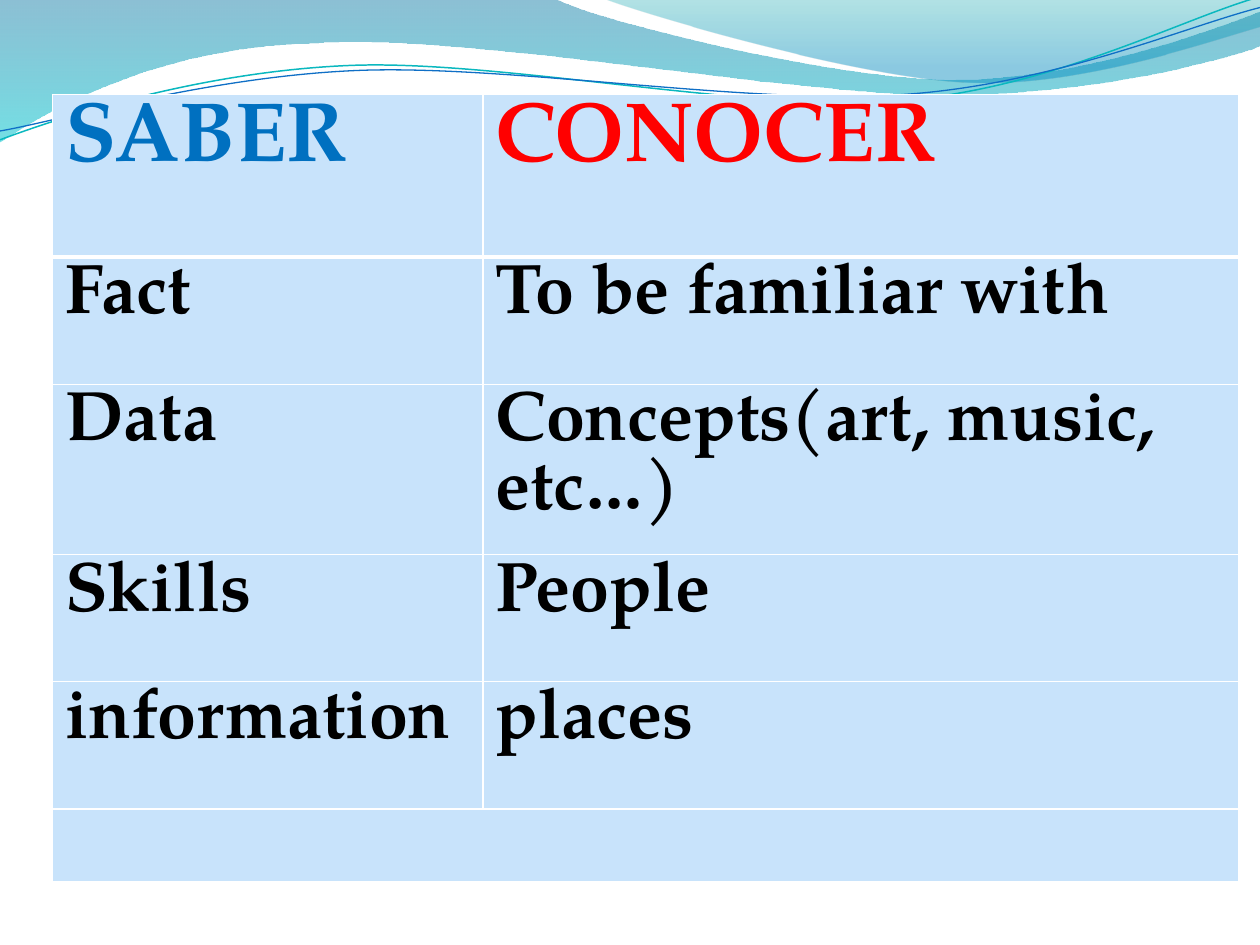
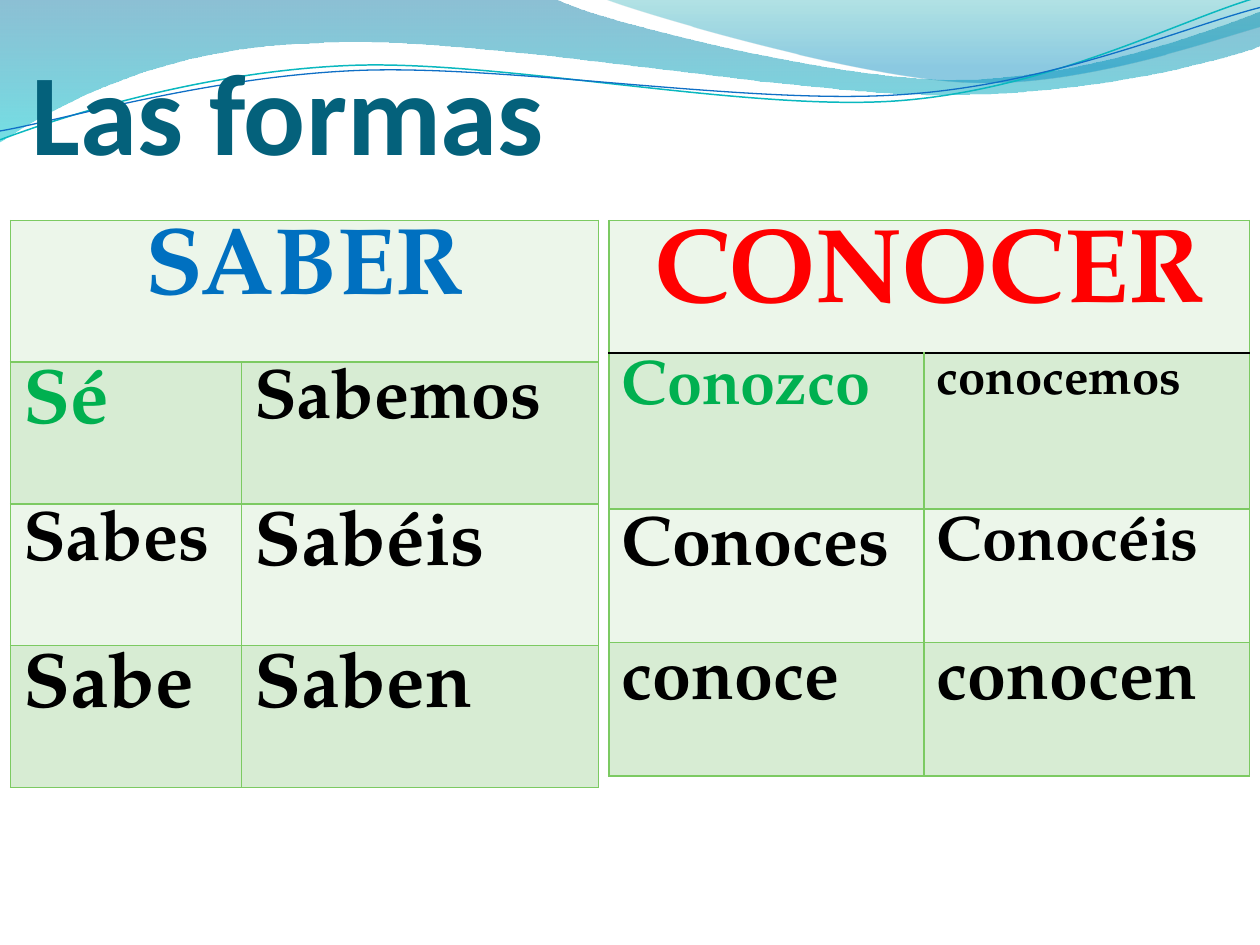
from dataclasses import dataclass
from math import cos, radians, sin
from typing import Any, NamedTuple, Optional

from lxml.etree import SubElement
from pptx import Presentation
from pptx.dml.color import RGBColor
from pptx.enum.text import MSO_ANCHOR, MSO_AUTO_SIZE, PP_ALIGN
from pptx.oxml import parse_xml
from pptx.oxml.ns import nsdecls, qn
from pptx.util import Inches, Pt

# Shared colours and fonts
BLACK, WHITE, RED, BLUE, GREEN = "000000", "FFFFFF", "FF0000", "0070C0", "00B050"
TITLE_TEAL, SKY = "04617B", "C8E3FB"
PALE_GREEN, SOFT_GREEN, GRID_GREEN = "ECF6EA", "D7ECD3", "7CCA62"
TITLE_FONT, TABLE_FONT = "Calibri", "TeX Gyre Pagella"

Point = tuple[float, float]


class Stop(NamedTuple):
    position: float
    color: str
    opacity: int


class Edge(NamedTuple):
    color: str
    points: float


class Word(NamedTuple):
    text: str
    size: int = 40
    color: str = BLACK


@dataclass
class Wave:
    """Each segment holds one point (straight) or three (Bezier curve)."""
    start: Point
    segments: list[tuple[Point, ...]]
    stops: tuple[Stop, ...] = ()
    line: Optional[Edge] = None
    rotation: float = 0
    center: Point = (0, 0)


@dataclass
class VerbTable:
    left: float
    top: float
    height: float
    columns: list[float]
    rows: list[float]
    words: list[list[Word]]  # a row with fewer words than columns is merged
    fills: list[str]  # row fills, used in turn
    grid: Edge
    header_rule: Edge


WAVES = [
    Wave((0, 0), [
        ((4.4, -0.01),),
        ((4.76, 0.17), (6.64, 0.63), (7.58, 0.63)),
        ((8.53, 0.63), (9.58, 0.26), (10, 0.09)),
        ((10.01, 0.36),),
        ((9.83, 0.44), (8.7, 0.76), (7.46, 0.75)),
        ((6.22, 0.75), (3.82, 0.28), (2.57, 0.34)),
        ((1.29, 0.36), (0.46, 0.83), (-0.01, 1.13)),
    ], stops=(Stop(0, "0074A1", 45), Stop(1, "00C6CF", 55))),
    Wave((4.79, -0.01), [
        ((5.09, 0.11), (6.82, 0.62), (7.69, 0.65)),
        ((8.56, 0.69), (9.61, 0.32), (10, 0.21)),
        ((10, 0),),
    ], stops=(Stop(0, "00A1A9", 30), Stop(0.8, "008BBF", 45))),
    Wave((0, 1.11), [
        ((0.48, 0.93), (1.58, 0.57), (2.77, 0.52)),
        ((3.95, 0.47), (5.93, 0.89), (7.13, 0.8)),
        ((8.33, 0.71), (9.38, 0.15), (9.98, -0.02)),
    ], line=Edge("0AB8BF", 0.85), rotation=357.3, center=(4.99, 0.57)),
    Wave((0, 1.04), [
        ((0.47, 0.96), (1.64, 0.61), (2.83, 0.56)),
        ((4.03, 0.51), (5.97, 0.84), (7.17, 0.75)),
        ((8.36, 0.67), (9.41, 0.21), (10, 0.06)),
    ], line=Edge("0F6FC6", 0.75), rotation=357.3, center=(5, 0.59)),
]

# Table columns stand on a grid of twelfths of an inch
USES = VerbTable(
    5 / 12, 0.75, 6.33, [41 / 12, 6], [1.29, 1.01, 1.35, 1.01, 1.01, 0.58],
    [
        [Word("SABER", 48, BLUE), Word("CONOCER", 48, RED)],
        [Word("Fact"), Word("To be familiar with")],
        [Word("Data"), Word("Concepts(art, music, etc…)")],
        [Word("Skills"), Word("People")],
        [Word("information"), Word("places")],
        [Word("")],
    ],
    [SKY], Edge(WHITE, 1), Edge(WHITE, 3))

SABER_FORMS = VerbTable(
    1 / 12, 1.75, 4.5, [22 / 12, 34 / 12], [4.5 / 4] * 4,
    [
        [Word("SABER", 54, BLUE)],
        [Word("Sé", 44, GREEN), Word("Sabemos")],
        [Word("Sabes"), Word("Sabéis", 44)],
        [Word("Sabe", 44), Word("Saben", 44)],
    ],
    [PALE_GREEN, SOFT_GREEN], Edge(GRID_GREEN, 1), Edge(GRID_GREEN, 1))

CONOCER_FORMS = VerbTable(
    58 / 12, 1.75, 4.47, [30 / 12, 31 / 12], [1.05, 1.24, 1.06, 1.06],
    [
        [Word("CONOCER", 60, RED)],
        [Word("Conozco", 36, GREEN), Word("conocemos", 28)],
        [Word("Conoces"), Word("Conocéis", 36)],
        [Word("conoce"), Word("conocen")],
    ],
    [PALE_GREEN, SOFT_GREEN], Edge(GRID_GREEN, 1), Edge(BLACK, 1))


def rgb(color: str) -> RGBColor:
    return RGBColor.from_string(color)


def apply_format(target: Any, values: dict[str, Any]) -> None:
    for attribute, value in values.items():
        setattr(target, attribute, value)


def write(paragraph: Any, word: Word, font: str) -> None:
    run = paragraph.add_run()
    run.text = word.text
    apply_format(run.font, {"name": font, "size": Pt(word.size), "bold": True})
    run.font.color.rgb = rgb(word.color)


def place(wave: Wave, point: Point) -> tuple[int, int]:
    """The point in EMU, before the wave's rotation is applied."""
    angle = radians(-wave.rotation)
    (cx, cy), (x, y) = wave.center, point
    dx, dy = x - cx, y - cy
    return (Inches(cx + dx * cos(angle) - dy * sin(angle)),
            Inches(cy + dx * sin(angle) + dy * cos(angle)))


def draw_wave(slide: Any, wave: Wave) -> Any:
    builder = slide.shapes.build_freeform(*place(wave, wave.start))
    builder.add_line_segments([place(wave, segment[-1]) for segment in wave.segments],
                              close=bool(wave.stops))
    shape = builder.convert_to_shape()

    # Turn the straight steps into Bezier curves
    steps = list(shape.element.iter(qn("a:lnTo")))
    for step, segment in zip(steps, wave.segments):
        if len(segment) == 3:
            curve = parse_xml(f'<a:cubicBezTo {nsdecls("a")}/>')
            for x, y in (place(wave, point) for point in segment):
                SubElement(curve, qn("a:pt"), x=str(x - shape.left), y=str(y - shape.top))
            step.getparent().replace(step, curve)

    shape.rotation = wave.rotation
    shape.shadow.inherit = False
    if wave.line:
        shape.fill.background()
        shape.line.color.rgb = rgb(wave.line.color)
        shape.line.width = Pt(wave.line.points)
        return shape
    shape.line.fill.background()
    shape.fill.gradient()
    shape.fill.gradient_angle = 270
    for gradient_stop, stop in zip(shape.fill.gradient_stops, wave.stops):
        gradient_stop.position = stop.position
        gradient_stop.color.rgb = rgb(stop.color)
    for color, stop in zip(shape.element.iter(qn("a:srgbClr")), wave.stops):
        SubElement(color, qn("a:alpha"), val=str(stop.opacity * 1000))
    return shape


def put_waves_on_master(prs: Any, slide: Any) -> None:
    """Draw the waves on a slide, then move them behind the master's placeholders."""
    tree = prs.slide_master.element.cSld.spTree
    for index, wave in enumerate(WAVES):
        element = draw_wave(slide, wave).element
        element.nvSpPr.cNvPr.set("id", str(100 + index))
        tree.insert(2 + index, element)


def set_borders(cell: Any, grid: Edge, top: Edge, bottom: Edge) -> None:
    properties = cell._tc.get_or_add_tcPr()
    sides = {"lnL": grid, "lnR": grid, "lnT": top, "lnB": bottom}
    for index, (side, edge) in enumerate(sides.items()):
        properties.insert(index, parse_xml(
            f'<a:{side} {nsdecls("a")} w="{Pt(edge.points)}"><a:solidFill>'
            f'<a:srgbClr val="{edge.color}"/></a:solidFill></a:{side}>'))


def draw_table(slide: Any, verbs: VerbTable) -> None:
    frame = slide.shapes.add_table(
        len(verbs.rows), len(verbs.columns), Inches(verbs.left), Inches(verbs.top),
        Inches(sum(verbs.columns)), Inches(verbs.height))
    table = frame.table
    apply_format(table, {"first_row": False, "horz_banding": False})
    for column, width in zip(table.columns, verbs.columns):
        column.width = Inches(width)
    for r, (height, words) in enumerate(zip(verbs.rows, verbs.words)):
        table.rows[r].height = Inches(height)
        for cell in table.rows[r].cells:
            cell.fill.solid()
            cell.fill.fore_color.rgb = rgb(verbs.fills[r % len(verbs.fills)])
            set_borders(cell, verbs.grid,
                        top=verbs.header_rule if r == 1 else verbs.grid,
                        bottom=verbs.header_rule if r == 0 else verbs.grid)
        merged = len(words) < len(verbs.columns)
        if merged:
            table.cell(r, 0).merge(table.cell(r, len(verbs.columns) - 1))
        for c, word in enumerate(words):
            if word.text:
                paragraph = table.cell(r, c).text_frame.paragraphs[0]
                paragraph.alignment = PP_ALIGN.CENTER if merged else PP_ALIGN.LEFT
                write(paragraph, word, TABLE_FONT)
    frame.height = Inches(verbs.height)


def set_title(slide: Any, text: str) -> None:
    title = slide.shapes.title
    apply_format(title, {"left": Inches(0.25), "top": Inches(0.17),
                         "width": Inches(9), "height": Inches(1.25)})
    apply_format(title.text_frame, {
        "margin_left": 0, "margin_top": Inches(0.05), "margin_right": 0,
        "margin_bottom": 0, "vertical_anchor": MSO_ANCHOR.BOTTOM,
        "auto_size": MSO_AUTO_SIZE.NONE, "word_wrap": True})
    paragraph = title.text_frame.paragraphs[0]
    paragraph.alignment = PP_ALIGN.LEFT
    write(paragraph, Word(text, 66, TITLE_TEAL), TITLE_FONT)


def main() -> None:
    prs = Presentation()
    prs.slide_width, prs.slide_height = Inches(10), Inches(7.5)
    title_only, blank = prs.slide_layouts[5], prs.slide_layouts[6]

    # When to use each verb
    uses_slide = prs.slides.add_slide(blank)
    put_waves_on_master(prs, uses_slide)
    draw_table(uses_slide, USES)

    # Present-tense forms
    forms_slide = prs.slides.add_slide(title_only)
    set_title(forms_slide, "Las formas")
    for verbs in (SABER_FORMS, CONOCER_FORMS):
        draw_table(forms_slide, verbs)

    prs.save("out.pptx")


if __name__ == "__main__":
    main()
